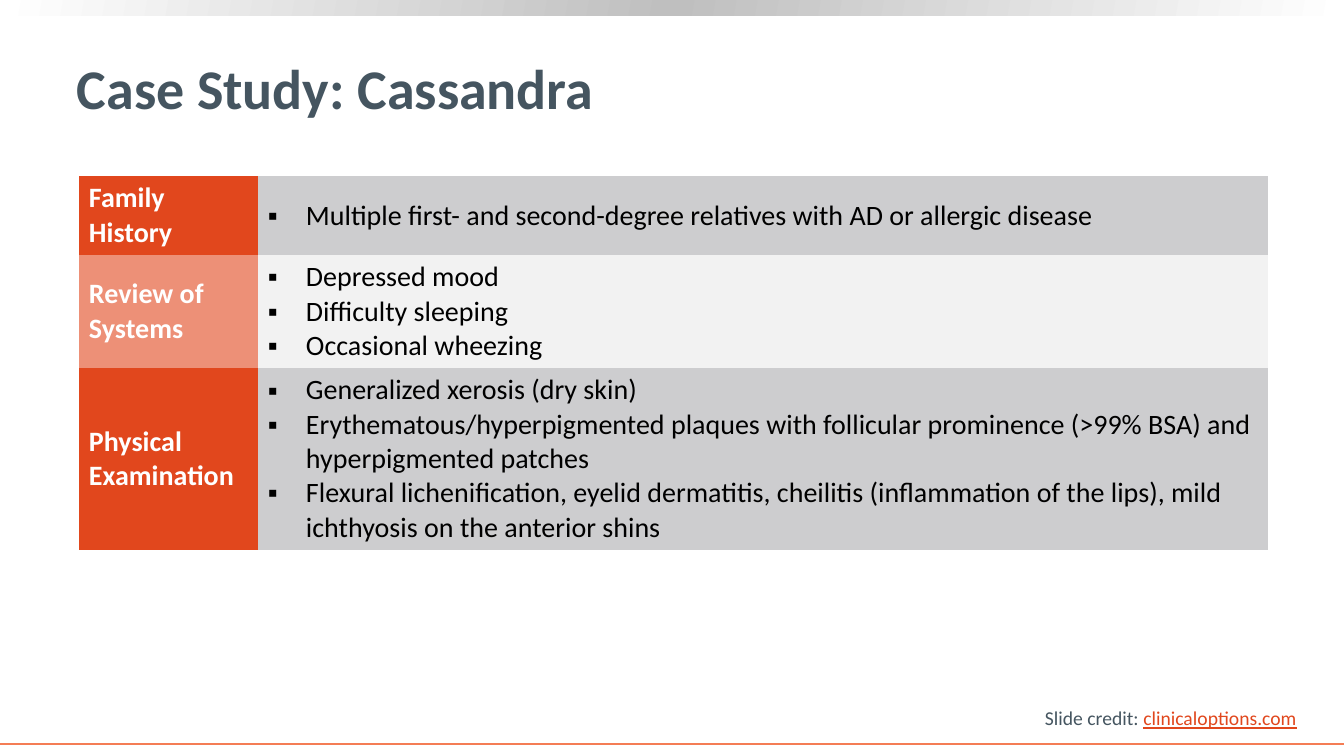
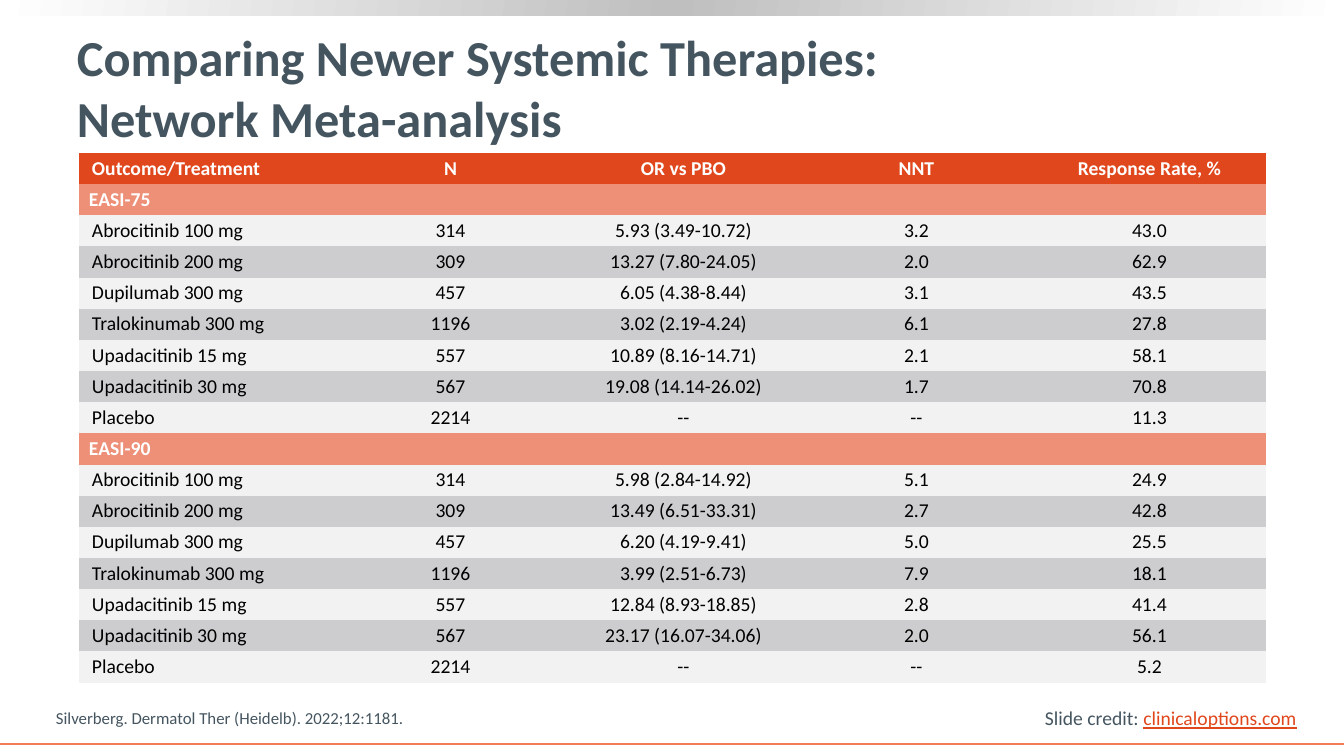
from copy import deepcopy

from lxml.etree import SubElement
from pptx import Presentation
from pptx.dml.color import RGBColor
from pptx.enum.shapes import MSO_CONNECTOR, MSO_SHAPE
from pptx.enum.text import MSO_ANCHOR, MSO_AUTO_SIZE, PP_ALIGN
from pptx.oxml.ns import qn
from pptx.util import Pt

SCALE = 914400 / 100.8
WIDE, HIGH = 1344, 756
PLAIN = "{2D5ABB26-0587-4C30-8999-92F81FD0307C}"

SLATE, WHITE, BLACK = "455560", "FFFFFF", "000000"
RED, CORAL, ORANGE = "E1471D", "ED9077", "F47D55"
GRAY, PALE, SILVER = "CDCDCF", "F2F2F2", "BFBFBF"

FACTS = [
    ("Family History", 79, [
        "Multiple first- and second-degree relatives with AD or allergic disease",
    ]),
    ("Review of Systems", 113, [
        "Depressed mood",
        "Difficulty sleeping",
        "Occasional wheezing",
    ]),
    ("Physical Examination", 182, [
        "Generalized xerosis (dry skin)",
        "Erythematous/hyperpigmented plaques with follicular prominence "
        "(>99% BSA) and hyperpigmented patches",
        "Flexural lichenification, eyelid dermatitis, cheilitis "
        "(inflammation of the lips), mild ichthyosis on the anterior shins",
    ]),
]

HEADS = ["Outcome/Treatment", "N", "OR vs PBO", "NNT", "Response Rate, %"]
ARMS = [
    ("Abrocitinib 100 mg", "314"),
    ("Abrocitinib 200 mg", "309"),
    ("Dupilumab 300 mg", "457"),
    ("Tralokinumab 300 mg", "1196"),
    ("Upadacitinib 15 mg", "557"),
    ("Upadacitinib 30 mg", "567"),
    ("Placebo", "2214"),
]
SCORES = {
    "EASI-75": [
        ("5.93 (3.49-10.72)", "3.2", "43.0"),
        ("13.27 (7.80-24.05)", "2.0", "62.9"),
        ("6.05 (4.38-8.44)", "3.1", "43.5"),
        ("3.02 (2.19-4.24)", "6.1", "27.8"),
        ("10.89 (8.16-14.71)", "2.1", "58.1"),
        ("19.08 (14.14-26.02)", "1.7", "70.8"),
        ("--", "--", "11.3"),
    ],
    "EASI-90": [
        ("5.98 (2.84-14.92)", "5.1", "24.9"),
        ("13.49 (6.51-33.31)", "2.7", "42.8"),
        ("6.20 (4.19-9.41)", "5.0", "25.5"),
        ("3.99 (2.51-6.73)", "7.9", "18.1"),
        ("12.84 (8.93-18.85)", "2.8", "41.4"),
        ("23.17 (16.07-34.06)", "2.0", "56.1"),
        ("--", "--", "5.2"),
    ],
}


def px(size):
    return round(size * SCALE)


def hue(code):
    return RGBColor.from_string(code)


def put(item, values):
    for name, value in values.items():
        setattr(item, name, value)


class Deck:
    face = "Calibri"

    def __init__(self):
        self.show = Presentation()
        put(self.show, {"slide_width": px(WIDE), "slide_height": px(HIGH)})
        self.slide = None

    def page(self, title, size):
        self.slide = self.show.slides.add_slide(self.show.slide_layouts[6])
        self.band()
        self.rule()
        self.text((1035, 701, 274, 34), [("Slide credit: ", SLATE, {}),
                  ("clinicaloptions.com", RED, {"underline": True})], 14,
                  {"word_wrap": False, "auto_size": MSO_AUTO_SIZE.SHAPE_TO_FIT_TEXT})
        self.text((67, 26, 1228, 122), [(title, SLATE, {"bold": True})], size,
                  {"vertical_anchor": MSO_ANCHOR.MIDDLE})

    def band(self):
        bar = self.slide.shapes.add_shape(MSO_SHAPE.RECTANGLE, 0, 0, px(WIDE), px(16))
        bar.shadow.inherit = False
        bar.line.fill.background()
        bar.fill.gradient()
        bar.fill.gradient_angle = 170
        stops = next(bar.element.iter(qn("a:gsLst")))
        stops.insert(1, deepcopy(stops[0]))
        for stop, tone, place in zip(bar.fill.gradient_stops,
                                     (WHITE, SILVER, WHITE), (0, 0.5, 1)):
            stop.color.rgb = hue(tone)
            stop.position = place

    def rule(self):
        line = self.slide.shapes.add_connector(
            MSO_CONNECTOR.STRAIGHT, 0, px(744), px(WIDE), px(744))
        line.line.color.rgb = hue(ORANGE)
        line.line.width = Pt(1.5)
        SubElement(line.element.spPr, qn("a:effectLst"))

    def style(self, run, size, tone, look):
        put(run.font, {"name": self.face, "size": Pt(size), **look})
        run.font.color.rgb = hue(tone)

    def text(self, box, parts, size, form):
        frame = self.slide.shapes.add_textbox(*map(px, box)).text_frame
        put(frame, {"word_wrap": True, **form})
        para = frame.paragraphs[0]
        for words, tone, look in parts:
            for index, row in enumerate(words.split("\n")):
                if index:
                    para.add_line_break()
                run = para.add_run()
                run.text = row
                self.style(run, size, tone, look)

    def grid(self, left, top, cols, rows):
        frame = self.slide.shapes.add_table(
            len(rows), len(cols), px(left), px(top), px(sum(cols)), px(sum(rows)))
        table = frame.table
        put(table, {"first_row": False, "horz_banding": False})
        next(frame.element.iter(qn("a:tableStyleId"))).text = PLAIN
        for col, wide in zip(table.columns, cols):
            col.width = px(wide)
        for row, high in zip(table.rows, rows):
            row.height = px(high)
        return table

    def cell(self, cell, rows, size, fill, tone=BLACK, side=10, form=None, dots=False):
        put(cell, {"vertical_anchor": MSO_ANCHOR.MIDDLE,
                   "margin_left": px(side), "margin_right": px(side),
                   "margin_top": px(5), "margin_bottom": px(5)})
        cell.fill.solid()
        cell.fill.fore_color.rgb = hue(fill)
        cell.text_frame.text = "\n".join(rows)
        for para in cell.text_frame.paragraphs:
            put(para, form or {})
            if dots:
                self.dot(para)
            self.style(para.runs[0], size, tone, {"bold": tone == WHITE})

    def dot(self, para):
        prop = para._p.get_or_add_pPr()
        prop.set("marL", str(px(38)))
        prop.set("indent", str(px(-38)))
        SubElement(prop, qn("a:buFont")).set("typeface", "Arial")
        SubElement(prop, qn("a:buChar")).set("char", "▪")


def case(deck):
    deck.page("Case Study: Cassandra", 40)
    table = deck.grid(79, 176, [179, 1010], [high for _, high, _ in FACTS])
    for index, (head, _, notes) in enumerate(FACTS):
        left, right = ((RED, GRAY), (CORAL, PALE))[index % 2]
        deck.cell(table.cell(index, 0), [head], 20, left, WHITE)
        deck.cell(table.cell(index, 1), notes, 20, right, dots=True)


def trial(deck):
    deck.page("Comparing Newer Systemic Therapies:\nNetwork Meta-analysis", 36)
    deck.text((46, 703, 900, 30), [
        ("Silverberg. Dermatol Ther (Heidelb). 2022;12:1181.", SLATE, {})], 12, {})
    rows = [(HEADS, RED, WHITE)]
    for group, scores in SCORES.items():
        rows.append(([group], CORAL, WHITE))
        for index, (arm, score) in enumerate(zip(ARMS, scores)):
            rows.append((arm + score, (PALE, GRAY)[index % 2], BLACK))
    table = deck.grid(79, 153, [255] + [233] * 4, [31] * len(rows))
    for row, (words, fill, tone) in enumerate(rows):
        whole = len(words) == 1
        if whole:
            table.cell(row, 0).merge(table.cell(row, len(HEADS) - 1))
        for col, word in enumerate(words):
            form = {"line_spacing": 0.9,
                    "alignment": PP_ALIGN.CENTER if col else PP_ALIGN.LEFT}
            deck.cell(table.cell(row, col), [word], 14, fill, tone,
                      10 if whole else 13, form)


def main():
    deck = Deck()
    case(deck)
    trial(deck)
    deck.show.save("out.pptx")


if __name__ == "__main__":
    main()
